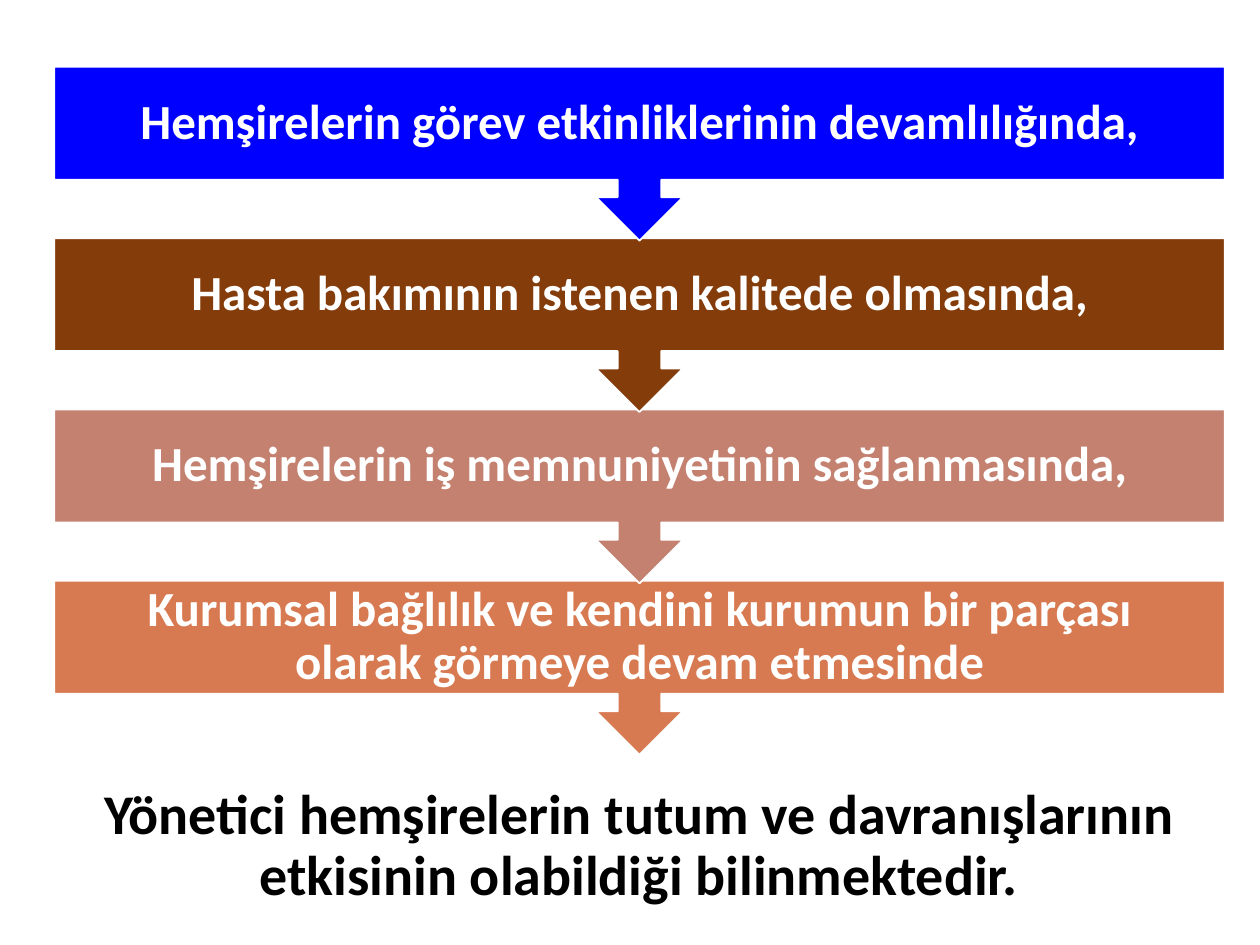
from pptx import Presentation
from pptx.dml.color import RGBColor
from pptx.enum.shapes import MSO_SHAPE
from pptx.enum.text import MSO_ANCHOR, PP_ALIGN
from pptx.util import Inches, Pt

STEPS = [
    ("Hemşirelerin görev etkinliklerinin devamlılığında,", "blue"),
    ("Hasta bakımının istenen kalitede olmasında,", "brown"),
    ("Hemşirelerin iş memnuniyetinin sağlanmasında,", "rose"),
    ("Kurumsal bağlılık ve kendini kurumun bir parçası olarak görmeye devam etmesinde", "orange"),
]
RESULT = "Yönetici hemşirelerin tutum ve davranışlarının etkisinin olabildiği bilinmektedir."

THEME = {
    "font": "Calibri", "step": 28, "result": 32, "line": 1,
    "white": "FFFFFF", "black": "000000",
    "blue": "0000FF", "brown": "843C0B", "rose": "C48170", "orange": "D87A51",
}
WIDE, HIGH = 10, 7.5
LEFT, TOP, SPAN = 0.43, 0.53, 9.29
PITCH, TALL, LAST = 1.36, 1.38, 1.39
INSET, DROP = 0.22, 0.11


def tint(name):
    return RGBColor.from_string(THEME[name])


def panel(slide, kind, row, tall, text, fill, ink, size, drop=0):
    box = slide.shapes.add_shape(
        kind, Inches(LEFT), Inches(TOP + row * PITCH), Inches(SPAN), Inches(tall))
    box.shadow.inherit = False
    box.fill.solid()
    box.fill.fore_color.rgb = tint(fill)
    box.line.color.rgb = tint("white")
    box.line.width = Pt(THEME["line"])
    frame = box.text_frame
    frame.word_wrap = True
    frame.vertical_anchor = MSO_ANCHOR.MIDDLE
    frame.margin_left = frame.margin_right = Inches(INSET)
    frame.margin_top, frame.margin_bottom = Inches(drop), 0
    para = frame.paragraphs[0]
    para.alignment = PP_ALIGN.CENTER
    para.line_spacing = 0.9
    run = para.add_run()
    run.text = text
    run.font.name = THEME["font"]
    run.font.size = Pt(THEME[size])
    run.font.bold = True
    run.font.color.rgb = tint(ink)


def main():
    deck = Presentation()
    deck.slide_width, deck.slide_height = Inches(WIDE), Inches(HIGH)
    slide = deck.slides.add_slide(deck.slide_layouts[6])
    panel(slide, MSO_SHAPE.RECTANGLE, len(STEPS), LAST,
          RESULT, "white", "black", "result", DROP)
    for row, (text, fill) in reversed(list(enumerate(STEPS))):
        panel(slide, MSO_SHAPE.DOWN_ARROW_CALLOUT, row, TALL,
              text, fill, "white", "step")
    deck.save("out.pptx")


if __name__ == "__main__":
    main()
